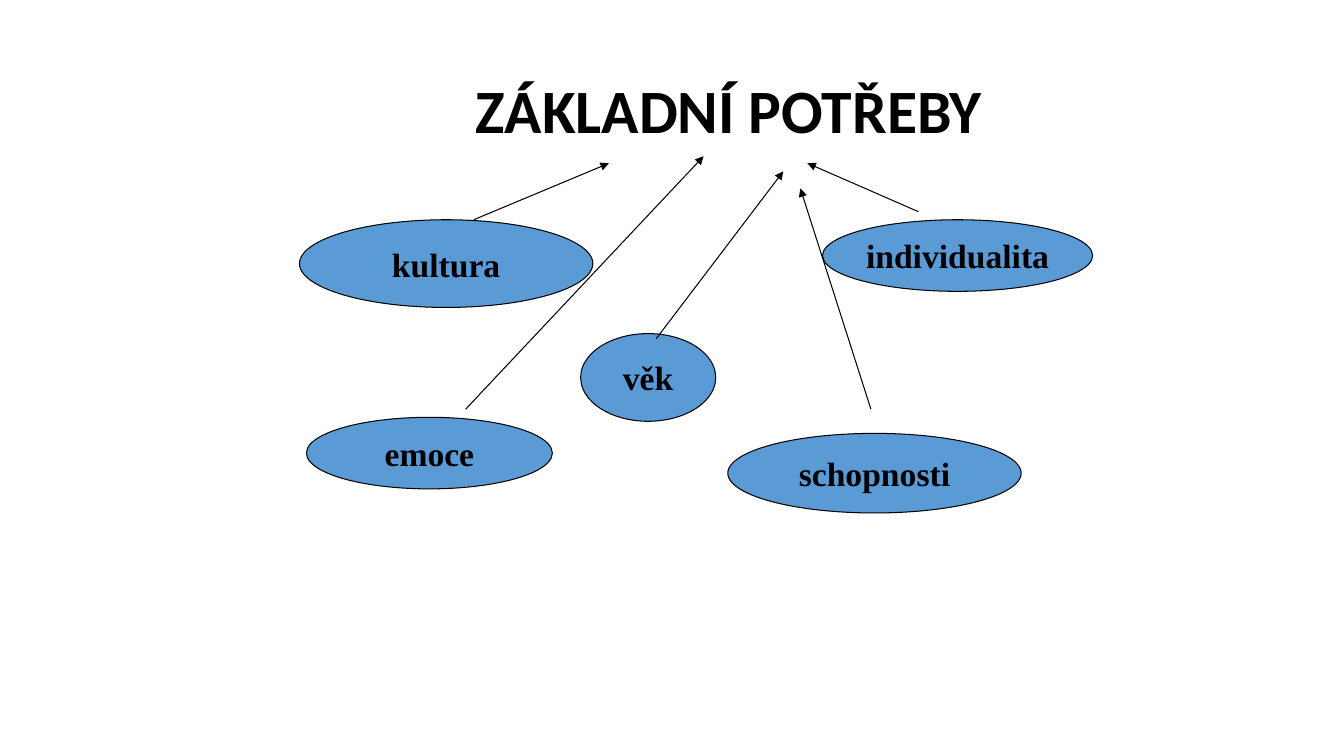
import pptx
import pptx.dml.color
import pptx.enum.shapes
import pptx.enum.text
import pptx.oxml
import pptx.oxml.ns
import pptx.util

SLIDE_WIDTH, SLIDE_HEIGHT = 13.33, 7.5
COLORS = {"ink": "000000", "oval": "5B9BD5"}
LINE_WIDTH = 0.75

# All places are percentages of the slide's width and height.
TITLE = ("ZÁKLADNÍ POTŘEBY", (6.9, 5.33, 86.25, 19.33))
TITLE_INDENT = 28.5
# Factor: (left, top, width, height), arrow start, arrow tip
FACTORS = {
    "kultura": ((22.28, 29.07, 21.83, 11.6), (35.25, 29.07), (45.3, 21.6)),
    "individualita": ((61.2, 29.07, 20.1, 9.47), (68.33, 28), (60.08, 21.6)),
    "věk": ((43.2, 44.13, 10.05, 11.6), (48.83, 44.8), (58.28, 22.67)),
    "emoce": ((22.8, 55.2, 18.3, 9.47), (34.65, 54.13), (52.35, 20.67)),
    "schopnosti": ((54.15, 57.33, 21.83, 10.53), (64.8, 54.13), (59.55, 24.93)),
}


def across(percent):
    return pptx.util.Inches(SLIDE_WIDTH * percent / 100)


def down(percent):
    return pptx.util.Inches(SLIDE_HEIGHT * percent / 100)


def place(left, top, width, height):
    return across(left), down(top), across(width), down(height)


def color(name):
    return pptx.dml.color.RGBColor.from_string(COLORS[name])


def draw_outline(line):
    line.color.rgb = color("ink")
    line.width = pptx.util.Pt(LINE_WIDTH)


def write(shape, text, font, size, align, wrap=False, spacing=1.0):
    frame = shape.text_frame
    frame.word_wrap = wrap
    frame.vertical_anchor = pptx.enum.text.MSO_ANCHOR.MIDDLE
    para = frame.paragraphs[0]
    para.alignment = align
    para.line_spacing = spacing
    span = para.add_run()
    span.text = text
    span.font.name = font
    span.font.size = pptx.util.Pt(size)
    span.font.bold = True
    span.font.color.rgb = color("ink")


def add_title(page):
    text, area = TITLE
    box = page.shapes.add_textbox(*place(*area))
    box.text_frame.margin_left = across(TITLE_INDENT)
    write(box, text, "Calibri", 44, pptx.enum.text.PP_ALIGN.LEFT,
          wrap=True, spacing=0.9)


def add_oval(page, text, area):
    oval = page.shapes.add_shape(pptx.enum.shapes.MSO_SHAPE.OVAL, *place(*area))
    oval.shadow.inherit = False
    oval.fill.solid()
    oval.fill.fore_color.rgb = color("oval")
    draw_outline(oval.line)
    write(oval, text, "Times New Roman", 24, pptx.enum.text.PP_ALIGN.CENTER)


def add_arrow(page, start, tip):
    arrow = page.shapes.add_connector(
        pptx.enum.shapes.MSO_CONNECTOR.STRAIGHT,
        across(start[0]), down(start[1]), across(tip[0]), down(tip[1]))
    draw_outline(arrow.line)
    namespace = pptx.oxml.ns.nsdecls("a")
    outline = arrow.line._get_or_add_ln()
    outline.append(pptx.oxml.parse_xml(f'<a:tailEnd {namespace} type="triangle"/>'))
    arrow._element.spPr.append(pptx.oxml.parse_xml(f"<a:effectLst {namespace}/>"))


def main():
    deck = pptx.Presentation()
    deck.slide_width = pptx.util.Inches(SLIDE_WIDTH)
    deck.slide_height = pptx.util.Inches(SLIDE_HEIGHT)
    page = deck.slides.add_slide(deck.slide_layouts[6])
    add_title(page)
    for name, (area, _, _) in FACTORS.items():
        add_oval(page, name, area)
    for _, start, tip in FACTORS.values():
        add_arrow(page, start, tip)
    deck.save("out.pptx")


if __name__ == "__main__":
    main()
